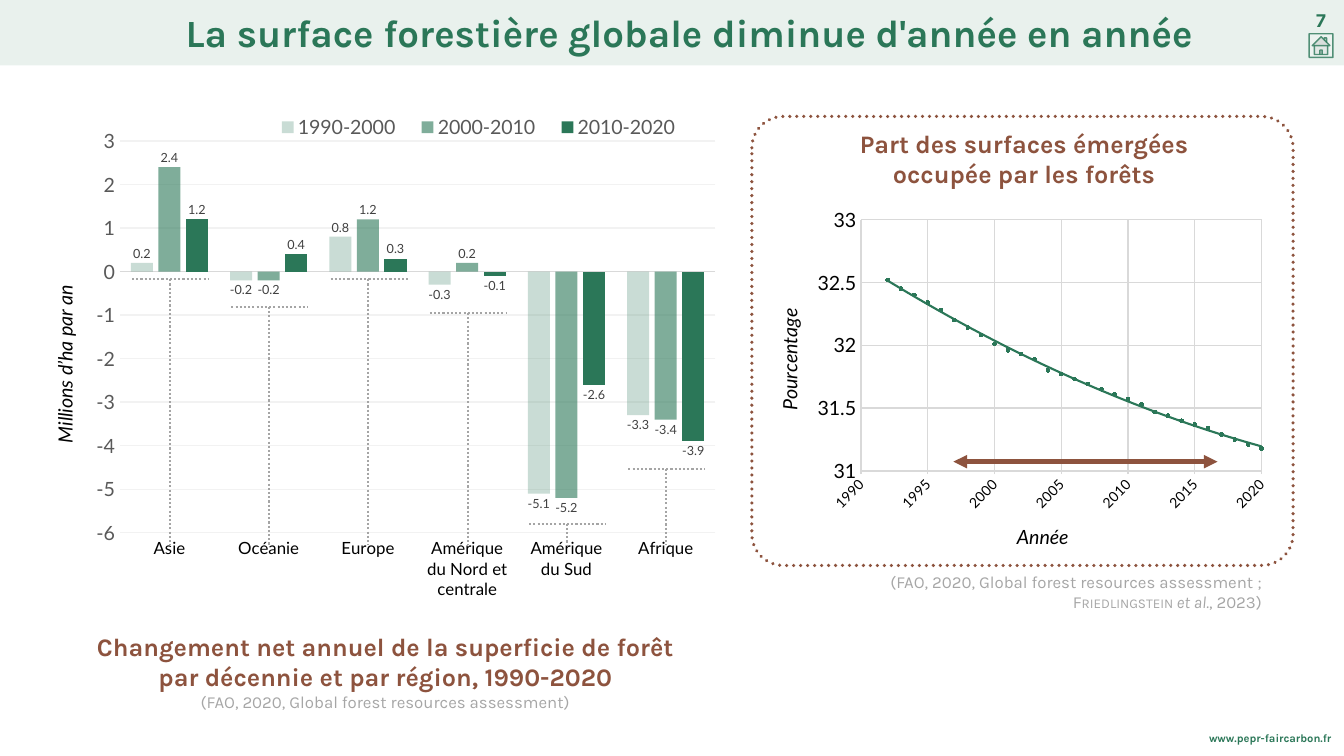
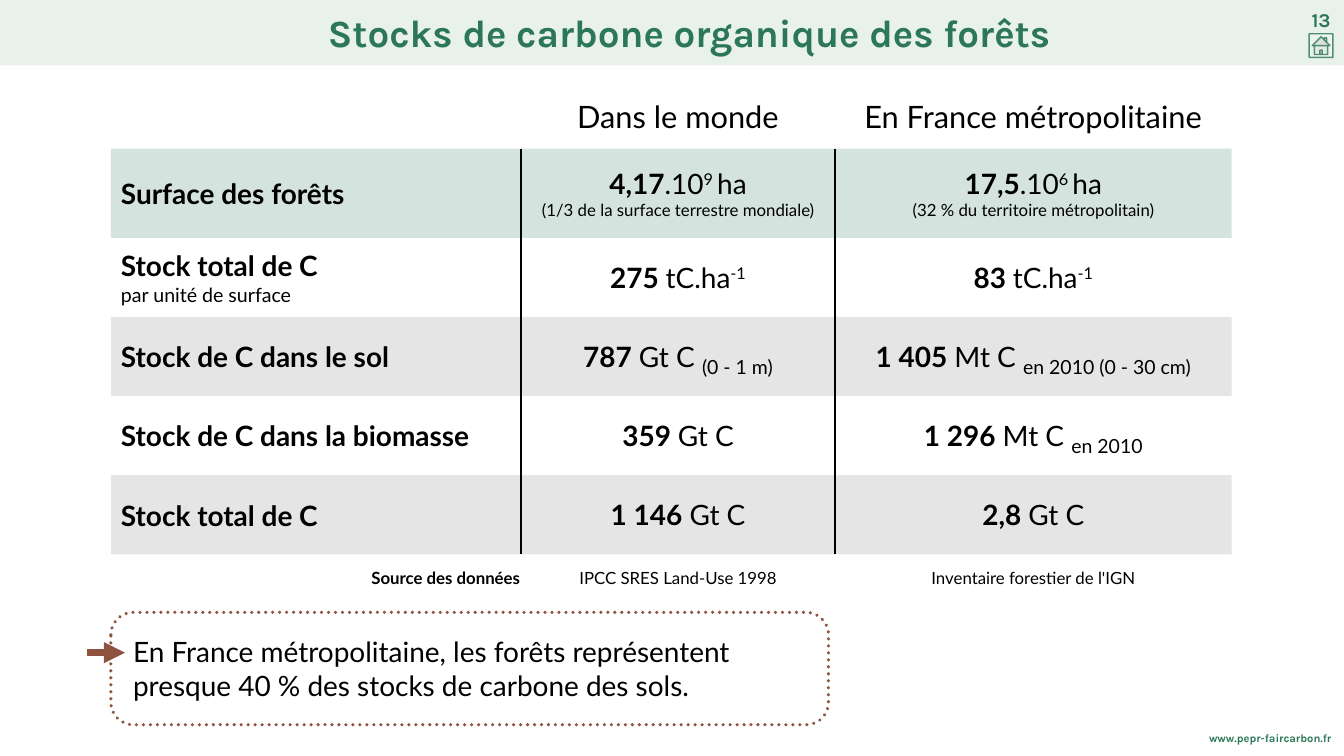
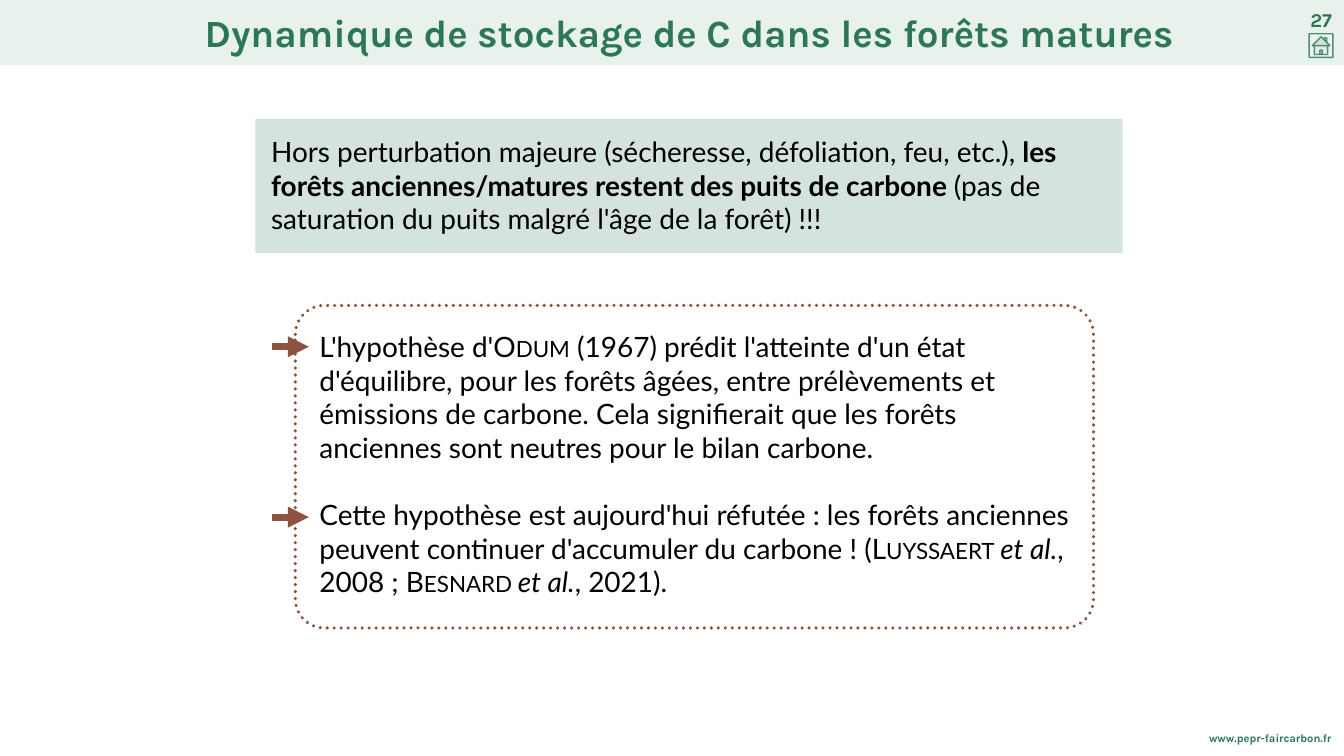
"""Build three slides on forest area and forest carbon stocks."""
from pptx import Presentation
from pptx.chart.data import CategoryChartData as CatData, XyChartData as XyData
from pptx.dml.color import RGBColor
from pptx.enum.chart import XL_CHART_TYPE as CHART, XL_LABEL_POSITION as SPOT
from pptx.enum.chart import XL_LEGEND_POSITION as LEGEND, XL_MARKER_STYLE as MARK
from pptx.enum.chart import XL_TICK_LABEL_POSITION as LABEL, XL_TICK_MARK as TICK
from pptx.enum.dml import MSO_LINE as DASH
from pptx.enum.shapes import MSO_CONNECTOR as LINK, MSO_SHAPE as SHAPE
from pptx.enum.text import MSO_ANCHOR as ANCHOR, PP_ALIGN as ALIGN
from pptx.oxml import parse_xml
from pptx.oxml.ns import nsdecls, qn
from pptx.oxml.xmlchemy import OxmlElement as Node
from pptx.util import Inches, Pt

GREEN = RGBColor(0x2B, 0x77, 0x58)
BROWN = RGBColor(0x8D, 0x53, 0x3E)
BLACK = RGBColor(0, 0, 0)
WHITE = RGBColor(0xFF, 0xFF, 0xFF)
DARK = RGBColor(0x40, 0x40, 0x40)
SLATE = RGBColor(0x59, 0x59, 0x59)
GREY = RGBColor(0xA6, 0xA6, 0xA6)
DOTS = RGBColor(0xA5, 0xA5, 0xA5)
RULE = RGBColor(0xD9, 0xD9, 0xD9)
PALE = RGBColor(0xF2, 0xF2, 0xF2)

BOLD = dict(bold=True)
EM = dict(italic=True)
CAPS = dict(caps=True)
SUP = dict(base=30)
SUB = dict(size=48, base=-20)
NOTE = dict(size=24)
KARLA = dict(font="Karla", color=GREEN, bold=True)
HEAD = dict(KARLA, color=BROWN, size=36, align=ALIGN.CENTER)
CITE = dict(size=24, color=GREY, bold=False)


def write(box, *paras, inset=(0.05,) * 4, anchor=ANCHOR.TOP, align=ALIGN.LEFT,
          gap=0, space=None, **look):
    """Fill a shape or cell; a paragraph is text or a list of text and (text, format)."""
    frame = box.text_frame
    frame.word_wrap = True
    edge = box if hasattr(box, "margin_left") else frame
    edge.vertical_anchor = anchor
    for side, size in zip(("left", "top", "right", "bottom"), inset):
        setattr(edge, "margin_" + side, Inches(size))
    for i, para in enumerate(paras):
        p = frame.add_paragraph() if i else frame.paragraphs[0]
        p.alignment = align
        if space:
            p.line_spacing = space
        if i and gap:
            p.space_before = Pt(gap)
        for piece in [para] if isinstance(para, str) else para:
            text, extra = (piece, {}) if isinstance(piece, str) else piece
            style = {"font": "Lato", "color": BLACK, **look, **extra}
            for n, part in enumerate(text.split("\n")):
                if n:
                    p.add_line_break()
                run = p.add_run()
                run.text = part
                font = run.font
                font.name, font.size = style["font"], Pt(style["size"])
                font.color.rgb = style["color"]
                font.bold = style.get("bold", False)
                font.italic = style.get("italic", False)
                if "base" in style:
                    font._rPr.set("baseline", str(style["base"] * 1000))
                if "caps" in style:
                    font._rPr.set("cap", "small")


def paint(fill, color, alpha=100):
    """Set a solid fill with its opacity in percent."""
    fill.solid()
    fill.fore_color.rgb = color
    if alpha < 100:
        node = Node("a:alpha")
        node.set("val", str(alpha * 1000))
        fill._xPr.find(qn("a:solidFill"))[0].append(node)


deck = Presentation()
deck.slide_width, deck.slide_height = Inches(26.67), Inches(15)
layout = deck.slide_layouts[5]

slides = []
for number, name in (
    (7, "La surface forestière globale diminue d'année en année"),
    (13, "Stocks de carbone organique des forêts"),
    (27, "Dynamique de stockage de C dans les forêts matures"),
):
    slide = deck.slides.add_slide(layout)
    slides.append(slide)
    title = slide.shapes.title
    title.left, title.top, title.width, title.height = map(Inches, (2.08, 0.22, 23.19, 0.94))
    write(title, name, size=55, align=ALIGN.CENTER, inset=(0.06,) * 4, space=0.9, **KARLA)
    page = slide.shapes.add_textbox(*map(Inches, (25.82, 0.11, 0.79, 0.57)))
    write(page, str(number), size=28, align=ALIGN.CENTER, **KARLA)
first, second, third = slides

band = first.shapes.add_shape(SHAPE.RECTANGLE, 0, 0, deck.slide_width, Inches(1.3))
paint(band.fill, GREEN, 10)
band.line.fill.background()
home = first.shapes.add_shape(SHAPE.ACTION_BUTTON_HOME, *map(Inches, (25.98, 0.67, 0.47, 0.47)))
paint(home.fill, WHITE, 20)
paint(home.line.fill, GREEN, 80)
home.line.width = Pt(2)
foot = first.shapes.add_textbox(*map(Inches, (23.89, 14.47, 2.63, 0.37)))
write(foot, "www.pepr-faircarbon.fr", size=16, align=ALIGN.RIGHT,
      inset=(0, 0.05, 0.1, 0.05), **KARLA)
for part in (band, home, foot):
    if part is not foot:
        part.shadow.inherit = False
    layout.shapes._spTree.append(part._element)

share = XyData()
dots = share.add_series("Series 1")
for year, rate in enumerate((
    32.52, 32.45, 32.4, 32.34, 32.28, 32.2, 32.14, 32.08, 32.01, 31.96,
    31.93, 31.89, 31.8, 31.77, 31.73, 31.69, 31.65, 31.61, 31.57, 31.53,
    31.47, 31.44, 31.4, 31.37, 31.34, 31.29, 31.25, 31.21, 31.18,
), 1992):
    dots.add_data_point(year, rate)
curve = first.shapes.add_chart(
    CHART.XY_SCATTER, *map(Inches, (15.15, 4, 10.19, 7.13)), share).chart

change = CatData()
change.categories = ["Asie", "Océanie", "Europe", "Amérique du Nord et centrale",
                     "Amérique du Sud", "Afrique"]
change.add_series("1990-2000", (0.2, -0.2, 0.8, -0.3, -5.1, -3.3))
change.add_series("2000-2010", (2.4, -0.2, 1.2, 0.2, -5.2, -3.4))
change.add_series("2010-2020", (1.2, 0.4, 0.3, -0.1, -2.6, -3.9))
bars = first.shapes.add_chart(
    CHART.COLUMN_CLUSTERED, *map(Inches, (0.9, 2.14, 13.43, 10.95)), change).chart

for chart, size in ((curve, 10), (bars, 28)):
    chart.has_title = False
    chart.font.name, chart.font.size, chart.font.color.rgb = "Lato", Pt(size), BLACK
    chart.plots[0].vary_by_categories = False

for axis, label, size, color, tick, line, grid, scale in (
    (curve.category_axis, "Année", 20, BLACK, TICK.OUTSIDE, 2, RULE, (1990, 2020, 5)),
    (curve.value_axis, "Pourcentage", 28, BLACK, TICK.OUTSIDE, 0, RULE, (31, 33, 0.5)),
    (bars.category_axis, "", 24, BLACK, TICK.NONE, 0.75, None, None),
    (bars.value_axis, "Millions d’ha par an", 28, SLATE, TICK.NONE, 0, PALE, (-6, 3, 1)),
):
    font = axis.tick_labels.font
    font.name, font.size, font.color.rgb = "Lato", Pt(size), color
    axis.major_tick_mark, axis.minor_tick_mark = tick, TICK.NONE
    axis.tick_label_position = LABEL.LOW
    if line:
        axis.format.line.color.rgb, axis.format.line.width = RULE, Pt(line)
    else:
        axis.format.line.fill.background()
    axis.has_major_gridlines = grid is not None
    if grid is not None:
        mesh = axis.major_gridlines.format.line
        mesh.color.rgb, mesh.width = grid, Pt(2)
    if scale:
        axis.minimum_scale, axis.maximum_scale, axis.major_unit = scale
    axis.has_title = bool(label)
    if label:
        run = axis.axis_title.text_frame.paragraphs[0].add_run()
        run.text = label
        run.font.name, run.font.size = "Lato", Pt(28)
        run.font.bold, run.font.italic, run.font.color.rgb = False, True, BLACK
curve.category_axis._element.find(qn("c:txPr")).find(qn("a:bodyPr")).set("rot", "-2700000")

curve.has_legend = False
trace = curve.plots[0].series[0]
trace.format.line.fill.background()
trace.marker.style, trace.marker.size = MARK.CIRCLE, 5
paint(trace.marker.format.fill, GREEN)
trace.marker.format.line.fill.background()
trace._element.find(qn("c:xVal")).addprevious(parse_xml(
    f'<c:trendline {nsdecls("c", "a")}><c:spPr><a:ln w="{Pt(3)}"><a:solidFill>'
    f'<a:srgbClr val="{GREEN}"/></a:solidFill></a:ln></c:spPr>'
    '<c:trendlineType val="poly"/><c:order val="2"/>'
    '<c:dispRSqr val="0"/><c:dispEq val="0"/></c:trendline>'))

plot = bars.plots[0]
plot.gap_width, plot.overlap = 100, -25
for series, alpha in zip(plot.series, (25, 60, 100)):
    paint(series.format.fill, GREEN, alpha)
    series.invert_if_negative = False
    tags = series.data_labels
    tags.show_value, tags.position = True, SPOT.OUTSIDE_END
    tags.font.name, tags.font.size, tags.font.color.rgb = "Lato", Pt(18), DARK
bars.has_legend = True
key = bars.legend
key.position, key.include_in_layout = LEGEND.TOP, False
key.font.name, key.font.size, key.font.color.rgb = "Lato", Pt(28), SLATE

for area, spot, target, place in (
    (curve._chartSpace.chart.plotArea, 0, '<c:layoutTarget val="inner"/>', (0.19, 0.05, 0.78, 0.7)),
    (bars._chartSpace.chart.plotArea, 0, '<c:layoutTarget val="inner"/>', (0.11, 0.06, 0.88, 0.71)),
    (key._element, 1, "", (0.32, 0.01, 0.64, 0.05)),
):
    for old in area.findall(qn("c:layout")):
        area.remove(old)
    modes = "".join(f'<c:{a}Mode val="edge"/>' for a in "xy")
    sizes = "".join(f'<c:{a} val="{v}"/>' for a, v in zip("xywh", place))
    area.insert(spot, parse_xml(
        f'<c:layout {nsdecls("c")}><c:manualLayout>{target}{modes}{sizes}'
        '</c:manualLayout></c:layout>'))

source = first.shapes.add_textbox(*map(Inches, (15.45, 11.29, 9.64, 0.91)))
write(source, ["(FAO, 2020, Global forest resources assessment ;\n", ("Friedlingstein ", CAPS),
               ("et al.", EM), ", 2023)"], font="Karla", align=ALIGN.RIGHT, **CITE)
head = first.shapes.add_textbox(*map(Inches, (15.05, 2.49, 10.54, 1.32)))
write(head, "Part des surfaces émergées\noccupée par les forêts", **HEAD)
head = first.shapes.add_textbox(*map(Inches, (1.05, 12.48, 13.19, 1.72)))
write(head, "Changement net annuel de la superficie de forêt\npar décennie et par région, 1990-2020",
      [("(FAO, 2020, Global forest resources assessment)", CITE)], **HEAD)

rows = (
    (1.02, None, [""], ["Dans le monde"], ["En France métropolitaine"]),
    (1.77, (GREEN, 20), [[("Surface des forêts", BOLD)]],
     [[("4,17", BOLD), ".10", ("9 ", SUP), "ha"],
      [("(1/3 de la surface terrestre mondiale)", NOTE)]],
     [[("17,5", BOLD), ".10", ("6 ", SUP), "ha"],
      [("(32 % du territoire métropolitain)", NOTE)]]),
    (1.57, None, [[("Stock total de C\n", BOLD), ("par unité de surface", dict(size=28))]],
     [[("275 ", BOLD), "tC.ha", ("-1", SUP)]], [[("83 ", BOLD), "tC.ha", ("-1", SUP)]]),
    (1.57, (BLACK, 10), [[("Stock de C dans le sol", BOLD)]],
     [[("787", BOLD), " Gt C ", ("(0 - 1 m)", SUB)]],
     [[("1 405", BOLD), " Mt C ", ("en 2010 (0 - 30 cm)", SUB)]]),
    (1.57, None, [[("Stock de C dans la biomasse", BOLD)]],
     [[("359 ", BOLD), "Gt C"]], [[("1 296", BOLD), " Mt C ", ("en 2010", SUB)]]),
    (1.57, (BLACK, 10), [[("Stock total de C", BOLD)]],
     [[("1 146", BOLD), " Gt C"]], [[("2,8", BOLD), " Gt C"]]),
    (0.94, None, [[("Source des données", BOLD)]],
     ["IPCC SRES Land-Use 1998"], ["Inventaire forestier de l'IGN"]),
)
table = second.shapes.add_table(7, 3, *map(Inches, (2.2, 1.93, 22.24, 10.04))).table
table.first_row = table.horz_banding = False
table._tbl.tblPr.find(qn("a:tableStyleId")).text = "{2D5ABB26-0587-4C30-8999-92F81FD0307C}"
for column, width in zip(table.columns, (8.14, 6.23, 7.87)):
    column.width = Inches(width)
for r, (height, tint, *texts) in enumerate(rows):
    table.rows[r].height = Inches(height)
    body = 0 < r < 6
    for c, paras in enumerate(texts):
        cell = table.cell(r, c)
        inset = (0.02, 0.02, 0.02, 0)
        if body:
            inset = (0, 0, 0, 0) if c else (0.2, 0.02, 0, 0)
        side = ALIGN.CENTER if c else ALIGN.LEFT if body else ALIGN.RIGHT
        write(cell, *paras, size=40 if body else 24 if r else 44, align=side,
              inset=inset, anchor=ANCHOR.MIDDLE if r else ANCHOR.TOP)
        if tint:
            paint(cell.fill, *tint)
        else:
            cell.fill.background()
        for tag, drawn in (("lnR", c < 2), ("lnL", c > 0)):
            if body and drawn:
                cell._tc.get_or_add_tcPr().insert(0, parse_xml(
                    f'<a:{tag} {nsdecls("a")} w="{Pt(3)}"><a:solidFill>'
                    f'<a:srgbClr val="{BLACK}"/></a:solidFill></a:{tag}>'))

claim = third.shapes.add_shape(SHAPE.RECTANGLE, *map(Inches, (5.07, 2.36, 17.21, 2.66)))
claim.shadow.inherit = False
paint(claim.fill, GREEN, 20)
claim.line.fill.background()
write(claim, ["Hors perturbation majeure (sécheresse, défoliation, feu, etc.), ",
              ("les forêts anciennes/matures restent des puits de carbone ", BOLD),
              "(pas de saturation du puits malgré l'âge de la forêt) !!!"],
      size=40, inset=(0.31,) * 4)

for slide, place, bend, paras in (
    (first, (14.92, 2.31, 10.74, 8.91), 0.07, []),
    (second, (2.2, 12.15, 14.24, 2.23), 0.2,
     ["En France métropolitaine, les forêts représentent presque 40 % des stocks "
      "de carbone des sols."]),
    (third, (5.86, 6.06, 15.84, 6.4), 0.09,
     [["L'hypothèse d'", ("Odum", CAPS),
       " (1967) prédit l'atteinte d'un état d'équilibre, pour les forêts âgées, entre "
       "prélèvements et émissions de carbone. Cela signifierait que les forêts anciennes "
       "sont neutres pour le bilan carbone."],
      ["Cette hypothèse est aujourd'hui réfutée : les forêts anciennes peuvent continuer "
       "d'accumuler du carbone ! (", ("Luyssaert ", CAPS), ("et al.", EM), ", 2008 ; ",
       ("Besnard ", CAPS), ("et al.", EM), ", 2021)."]]),
):
    box = slide.shapes.add_shape(SHAPE.ROUNDED_RECTANGLE, *map(Inches, place))
    box.shadow.inherit = False
    box.adjustments[0] = bend
    box.fill.background()
    box.line.color.rgb, box.line.width = BROWN, Pt(5)
    box.line.dash_style = DASH.ROUND_DOT
    box.line._ln.set("cap", "rnd")
    write(box, *paras, size=40, inset=(0.31,) * 4, gap=48)

lines = [
    (first, (18.92, 9.16, 24.16, 9.16), BROWN, 6.5, ("a:headEnd", "a:tailEnd")),
    (second, (2.48, 12.95, 1.73, 12.95), BROWN, 10, ("a:headEnd",)),
    (third, (6.13, 6.88, 5.39, 6.88), BROWN, 10, ("a:headEnd",)),
    (third, (6.13, 10.26, 5.39, 10.26), BROWN, 10, ("a:headEnd",)),
]
for i, y in enumerate((5.54, 6.09, 5.54, 6.21, 10.39, 9.3)):
    x = 2.62 + 1.97 * i
    lines.append((first, (x, y, x + 1.53, y), DOTS, 3, ()))
    lines.append((first, (x + 0.75, y, x + 0.75, 10.82), DOTS, 3, ()))
for slide, ends, color, width, tips in lines:
    link = slide.shapes.add_connector(LINK.STRAIGHT, *map(Inches, ends))
    link.line.color.rgb, link.line.width = color, Pt(width)
    if not tips:
        link.line.dash_style = DASH.ROUND_DOT
    for tip in tips:
        node = Node(tip)
        node.set("type", "triangle")
        link.line._ln.append(node)
    link._element.spPr.append(Node("a:effectLst"))

deck.save("out.pptx")
